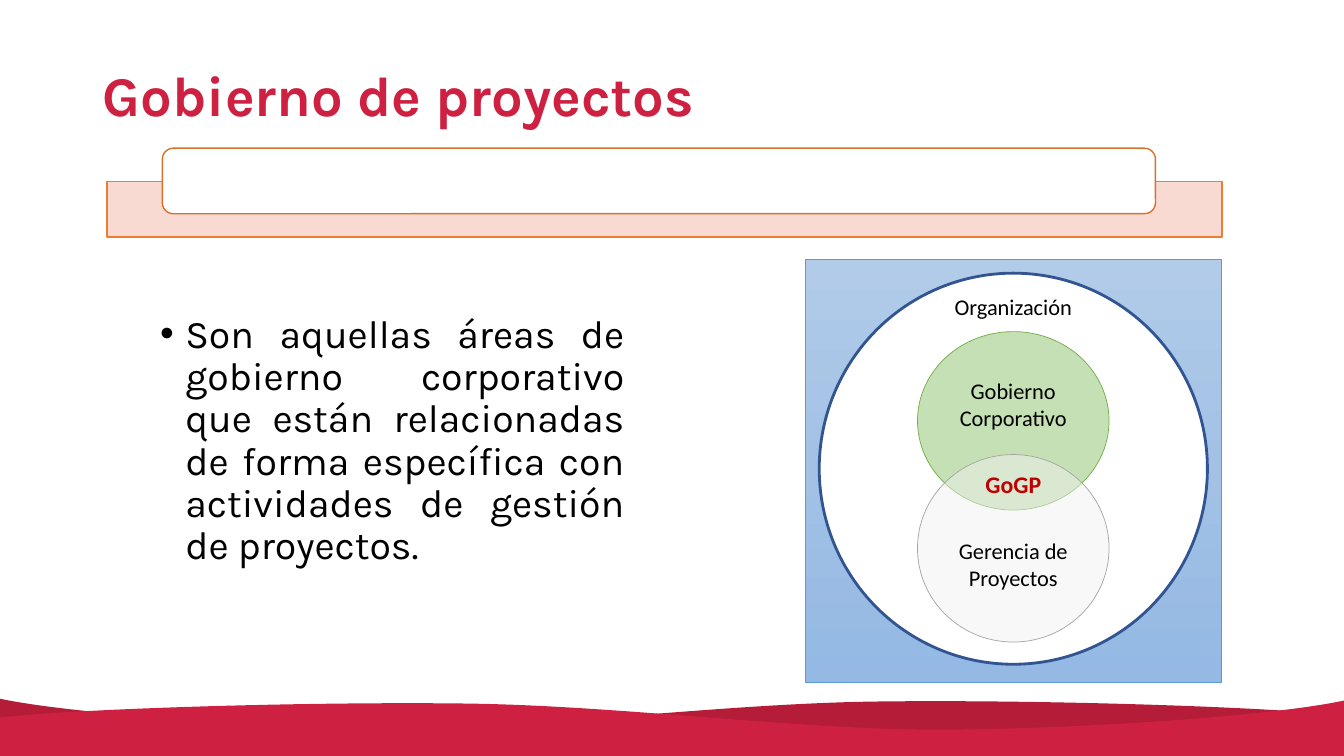
from copy import deepcopy

from lxml.etree import SubElement
from pptx import Presentation
from pptx.dml.color import RGBColor
from pptx.enum.shapes import MSO_SHAPE as Shape
from pptx.enum.text import MSO_ANCHOR as Anchor, MSO_AUTO_SIZE as AutoSize, PP_ALIGN as Align
from pptx.oxml.ns import qn
from pptx.util import Inches, Pt

COLORS = {
    "red": "CE2142", "dark_red": "B41C38", "black": "000000", "white": "FFFFFF",
    "peach": "F8D7CE", "orange": "ED7D31", "rust": "D7712C",
    "sky_top": "B1CBE9", "sky_middle": "A3C1E5", "sky_bottom": "93B9E4",
    "sky_edge": "5B9BD5", "navy": "325491",
    "green": "C5E0B4", "green_edge": "70AD47", "gray": "F2F2F2", "gray_edge": "A5A5A5",
    "accent": "C00000",
}
WAVE_START = (13.34, 0.17)
WAVE_CURVES = [
    ((12.57, 0.08), (10.27, 0.01), (8.71, 0.03)),
    ((7.16, 0.05), (5.44, 0.29), (3.99, 0.29)),
    ((2.54, 0.28), (0.69, 0.15), (0, 0)),
]


def rgb(name):
    """Return the named colour."""
    return RGBColor.from_string(COLORS[name])


def place(item, left, top, width, height):
    """Move and size an item, in inches."""
    item.left, item.top = Inches(left), Inches(top)
    item.width, item.height = Inches(width), Inches(height)


def format_para(para, font, size, color, bold=False, align=Align.LEFT):
    """Align a paragraph and format its runs."""
    para.alignment = align
    for span in para.runs:
        span.font.name, span.font.size = font, Pt(size)
        span.font.bold, span.font.color.rgb = bold, rgb(color)


def add_panel(page, kind, box, fill, edge, weight, opacity=None):
    """Add a filled, outlined shape without shadow."""
    panel = page.shapes.add_shape(kind, *map(Inches, box))
    panel.shadow.inherit = False
    panel.fill.solid()
    panel.fill.fore_color.rgb = rgb(fill)
    panel.line.color.rgb, panel.line.width = rgb(edge), Pt(weight)
    if opacity is not None:
        tint = panel.fill._xPr.find(qn("a:solidFill"))[0]
        SubElement(tint, qn("a:alpha"), val=str(opacity * 1000))
    return panel


def add_label(page, box, text, size=16, color="black", bold=False):
    """Add a centred diagram label."""
    label = page.shapes.add_textbox(*map(Inches, box))
    label.text_frame.word_wrap = True
    para = label.text_frame.paragraphs[0]
    para.text = text
    format_para(para, "Calibri", size, color, bold, Align.CENTER)


def add_wave(page, start, curves, corners, color):
    """Draw a filled outline whose crest is a chain of Bézier curves."""
    builder = page.shapes.build_freeform(*start)
    builder.add_line_segments([curve[-1] for curve in curves] + corners, close=True)
    wave = builder.convert_to_shape()
    wave.shadow.inherit = False
    wave.fill.solid()
    wave.fill.fore_color.rgb = rgb(color)
    wave.line.fill.background()
    segments = list(wave._element.iter(qn("a:lnTo")))
    for segment, curve in zip(segments, curves):
        segment.tag = qn("a:cubicBezTo")
        segment.remove(segment[0])
        for x, y in curve:
            SubElement(segment, qn("a:pt"), x=str(x - wave.left), y=str(y - wave.top))


def add_footer(page, left, top, width, height):
    """Draw two waves, the front one mirrored and slightly lower."""
    def behind(point):
        """Locate a point of the back wave."""
        return Inches(left + point[0]), Inches(top + point[1])

    def front(point):
        """Locate the mirrored point of the front wave."""
        return behind((width - point[0], point[1] + 0.02))

    for locate, color in ((behind, "dark_red"), (front, "red")):
        curves = [[locate(point) for point in curve] for curve in WAVE_CURVES]
        corners = [locate((0, height)), locate((width, height))]
        add_wave(page, locate(WAVE_START), curves, corners, color)


def add_title(page, left, top, width, height):
    """Fill and format the title placeholder."""
    title = page.shapes.title
    place(title, left, top, width, height)
    frame = title.text_frame
    frame.text = "Gobierno de proyectos"
    frame.auto_size, frame.vertical_anchor = AutoSize.NONE, Anchor.MIDDLE
    frame.paragraphs[0].line_spacing = 0.9
    format_para(frame.paragraphs[0], "Karla", 40, "red", True)


def add_banner(page, left, top, width, height):
    """Draw the band and the rounded tab over it."""
    add_panel(page, Shape.RECTANGLE, (left, top + 0.33, width, height - 0.33), "peach", "orange", 1, 90)
    add_panel(page, Shape.ROUNDED_RECTANGLE, (left + 0.55, top, width - 1.21, 0.65), "white", "rust", 1)


def add_definition(page, left, top, width, height):
    """Write the justified bullet."""
    body = page.shapes.add_textbox(*map(Inches, (left, top, width, height)))
    body.text_frame.word_wrap = True
    para = body.text_frame.paragraphs[0]
    para.text = ("Son aquellas áreas de gobierno corporativo que están relacionadas "
                 "de forma específica con actividades de gestión de proyectos.")
    para.line_spacing, para.space_before = 0.9, Pt(10)
    format_para(para, "Karla", 28, "black", align=Align.JUSTIFY)
    props = para._p.get_or_add_pPr()
    props.set("marL", str(Inches(0.25)))
    props.set("indent", str(Inches(-0.25)))
    SubElement(props, qn("a:buFont"), typeface="Arial")
    SubElement(props, qn("a:buChar"), char="•")


def shade_backdrop(backdrop):
    """Give the backdrop its three-stop vertical gradient."""
    fill = backdrop.fill
    fill.gradient()
    fill.gradient_angle = 270
    first = fill._xPr.find(qn("a:gradFill")).find(qn("a:gsLst"))[0]
    first.addnext(deepcopy(first))
    shades = ("sky_top", "sky_middle", "sky_bottom")
    for index, (stop, color) in enumerate(zip(fill.gradient_stops, shades)):
        stop.position = index / 2
        stop.color.rgb = rgb(color)


def add_diagram(page, left, top, width, height):
    """Draw the nested circles and their labels."""
    box = (left, top, width, height)
    shade_backdrop(add_panel(page, Shape.RECTANGLE, box, "sky_top", "sky_edge", 0.5))

    def centered(offset, item_width, item_height):
        """Return a box centred across the diagram."""
        return left + (width - item_width) / 2, top + offset, item_width, item_height

    add_panel(page, Shape.OVAL, centered(0.14, 3.85, 3.88), "white", "navy", 2)
    add_label(page, centered(0.29, 1.72, 0.37), "Organización")
    add_panel(page, Shape.OVAL, centered(0.72, 1.9, 1.77), "green", "green_edge", 0.5)
    add_panel(page, Shape.OVAL, centered(1.94, 1.9, 1.86), "gray", "gray_edge", 0.5, 48)
    add_label(page, centered(1.12, 1.57, 0.64), "Gobierno\vCorporativo")
    add_label(page, centered(2.71, 1.41, 0.64), "Gerencia de\vProyectos")
    add_label(page, centered(2.04, 1.01, 0.39), "GoGP", 17, "accent", True)


def main():
    """Build and save the slide."""
    deck = Presentation()
    deck.slide_width, deck.slide_height = Inches(13.33), Inches(7.5)
    page = deck.slides.add_slide(deck.slide_layouts[5])
    add_footer(page, -0.01, 6.93, 13.34, 0.57)
    add_title(page, 0.92, 0.25, 11.5, 1.45)
    add_definition(page, 1.49, 3.07, 4.8, 2.8)
    add_banner(page, 1.06, 1.47, 11.06, 0.88)
    add_diagram(page, 7.99, 2.57, 4.12, 4.2)
    deck.save("out.pptx")


if __name__ == "__main__":
    main()
